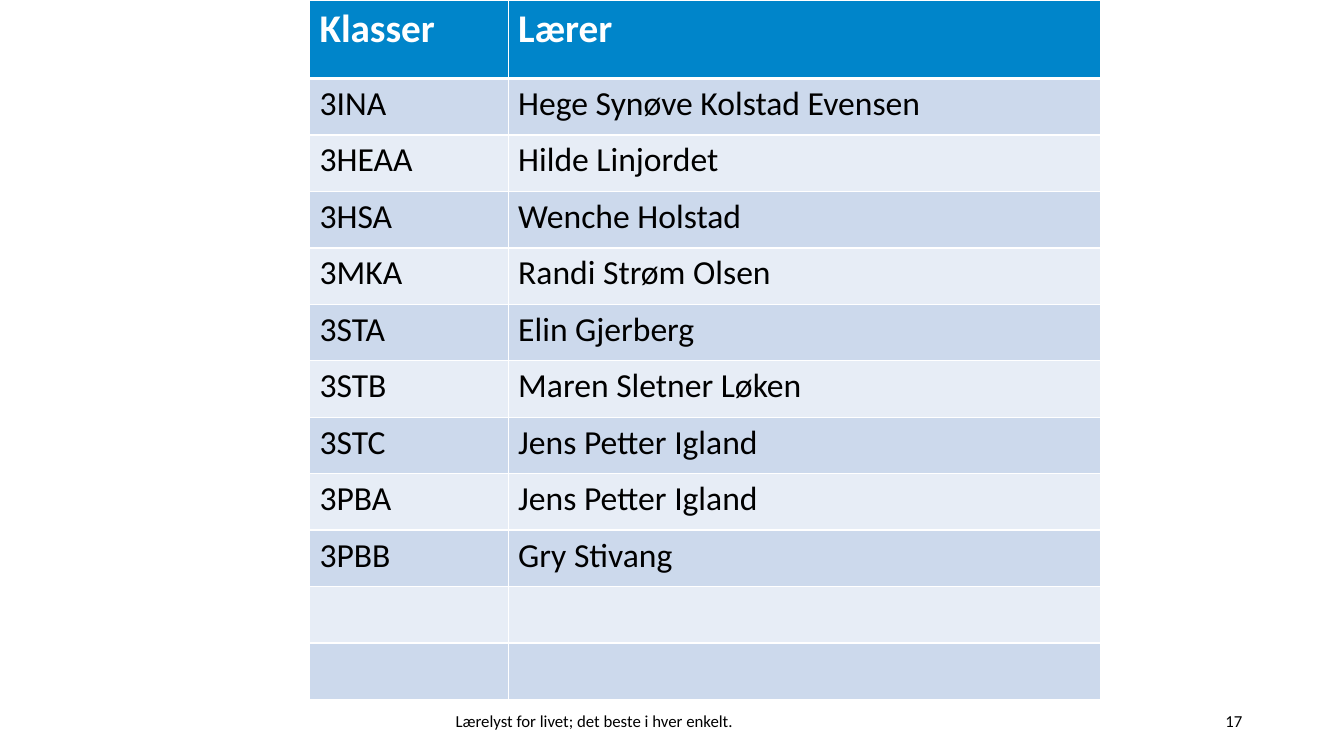
"""Build the slide that lists classes and their teachers."""
from dataclasses import dataclass

from lxml import etree
from pptx import Presentation
from pptx.dml.color import RGBColor
from pptx.enum.text import MSO_ANCHOR, PP_ALIGN
from pptx.oxml.ns import qn
from pptx.slide import Slide
from pptx.table import _Cell
from pptx.text.text import TextFrame
from pptx.util import Inches, Pt

LEFT, RIGHT = PP_ALIGN.LEFT, PP_ALIGN.RIGHT
MIDDLE = MSO_ANCHOR.MIDDLE
FONT = "Calibri"
COLORS = {
    "header": "0085CA",
    "dark_band": "CCD9EC",
    "light_band": "E7EDF6",
    "white": "FFFFFF",
    "black": "000000",
}
COLUMN_WIDTHS = (1.97, 5.88)
HEADER_HEIGHT = 0.78
ROW_HEIGHT = 0.56
BLANK_ROWS = 2


@dataclass(frozen=True)
class ClassRow:
    class_name: str = ""
    teacher: str = ""


@dataclass(frozen=True)
class FooterItem:
    text: str
    left: float
    width: float
    align: PP_ALIGN


HEADER = ClassRow("Klasser", "Lærer")
CLASSES = [
    ClassRow("3INA", "Hege Synøve Kolstad Evensen"),
    ClassRow("3HEAA", "Hilde Linjordet"),
    ClassRow("3HSA", "Wenche Holstad"),
    ClassRow("3MKA", "Randi Strøm Olsen"),
    ClassRow("3STA", "Elin Gjerberg"),
    ClassRow("3STB", "Maren Sletner Løken"),
    ClassRow("3STC", "Jens Petter Igland"),
    ClassRow("3PBA", "Jens Petter Igland"),
    ClassRow("3PBB", "Gry Stivang"),
]
FOOTER = [
    FooterItem("Lærelyst for livet; det beste i hver enkelt.", 4.42, 4.5, LEFT),
    FooterItem("17", 9.42, 3, RIGHT),
]


def write_text(frame: TextFrame, text: str, *, size: float, color: str = "black",
               bold: bool = False, align: PP_ALIGN = LEFT) -> None:
    para = frame.paragraphs[0]
    para.alignment = align
    span = para.add_run()
    span.text = text
    span.font.name = FONT
    span.font.size = Pt(size)
    span.font.bold = bold
    span.font.color.rgb = RGBColor.from_string(COLORS[color])


def style_cell(cell: _Cell, fill: str, top: float, bottom: float) -> None:
    properties = cell._tc.get_or_add_tcPr()
    widths = {"a:lnL": 1, "a:lnR": 1, "a:lnT": top, "a:lnB": bottom}
    for tag, width in widths.items():
        line = etree.SubElement(properties, qn(tag), w=str(Pt(width)))
        solid = etree.SubElement(line, qn("a:solidFill"))
        etree.SubElement(solid, qn("a:srgbClr"), val=COLORS["white"])
    cell.fill.solid()
    cell.fill.fore_color.rgb = RGBColor.from_string(COLORS[fill])


def add_class_table(page: Slide) -> None:
    rows = [HEADER, *CLASSES, *[ClassRow()] * BLANK_ROWS]
    height = HEADER_HEIGHT + ROW_HEIGHT * (len(rows) - 1)
    table = page.shapes.add_table(
        len(rows), len(COLUMN_WIDTHS), Inches(3.07), Inches(0),
        Inches(sum(COLUMN_WIDTHS)), Inches(height)).table
    for column, width in zip(table.columns, COLUMN_WIDTHS):
        column.width = Inches(width)
    for index, row in enumerate(rows):
        is_header = index == 0
        table.rows[index].height = Inches(HEADER_HEIGHT if is_header else ROW_HEIGHT)
        band = "dark_band" if index % 2 else "light_band"
        for column_index, text in enumerate((row.class_name, row.teacher)):
            cell = table.cell(index, column_index)
            style_cell(cell, "header" if is_header else band,
                       top=3 if index == 1 else 1, bottom=3 if is_header else 1)
            if text:
                write_text(cell.text_frame, text, size=28 if is_header else 24,
                           color="white" if is_header else "black", bold=is_header)


def add_footer_item(page: Slide, item: FooterItem) -> None:
    box = page.shapes.add_textbox(
        Inches(item.left), Inches(6.95), Inches(item.width), Inches(0.4))
    frame = box.text_frame
    frame.word_wrap = True
    frame.vertical_anchor = MIDDLE
    write_text(frame, item.text, size=12, align=item.align)


def main() -> None:
    deck = Presentation()
    deck.slide_width = Inches(13.33)
    deck.slide_height = Inches(7.5)
    page = deck.slides.add_slide(deck.slide_layouts[6])
    add_class_table(page)
    for item in FOOTER:
        add_footer_item(page, item)
    deck.save("out.pptx")


if __name__ == "__main__":
    main()
